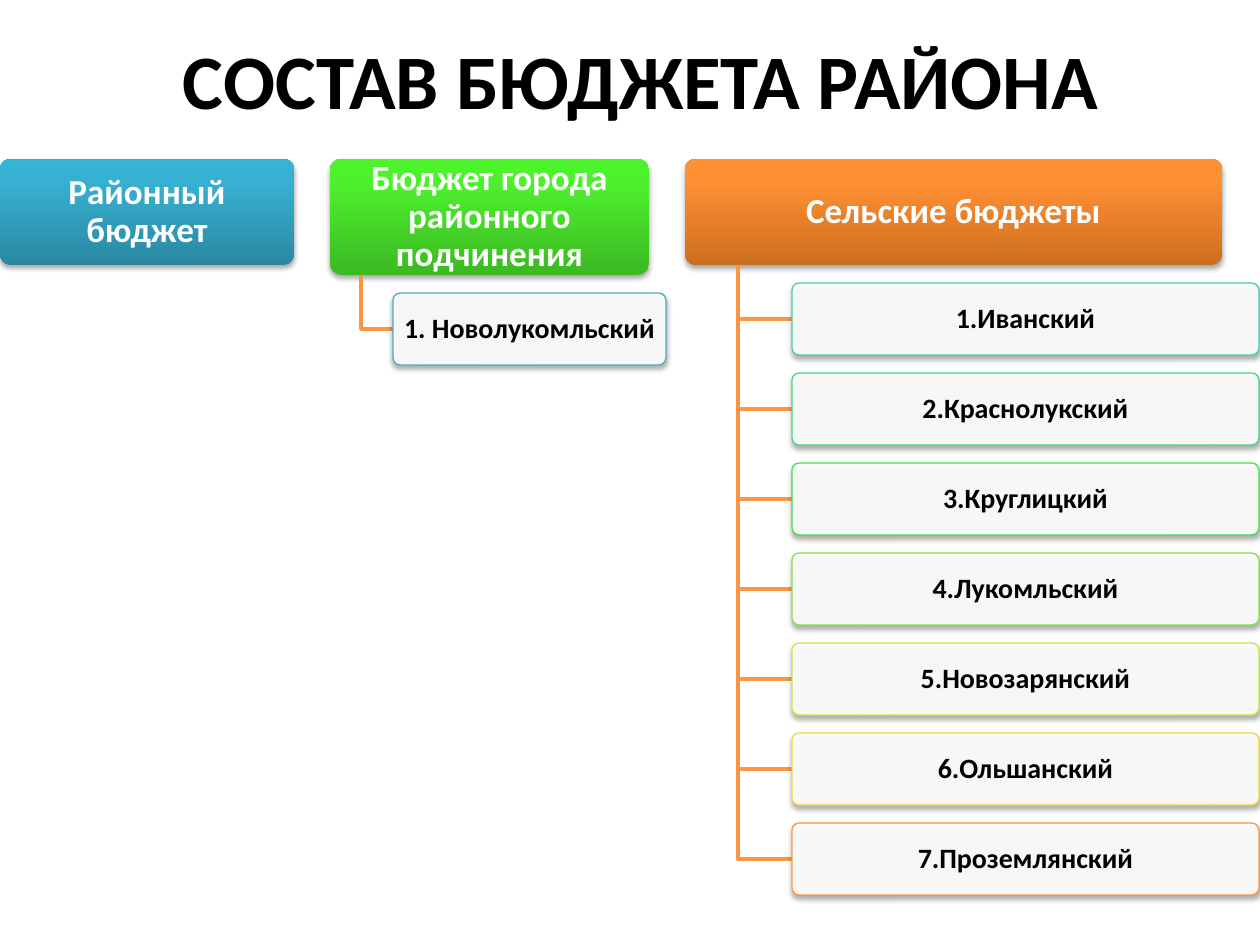
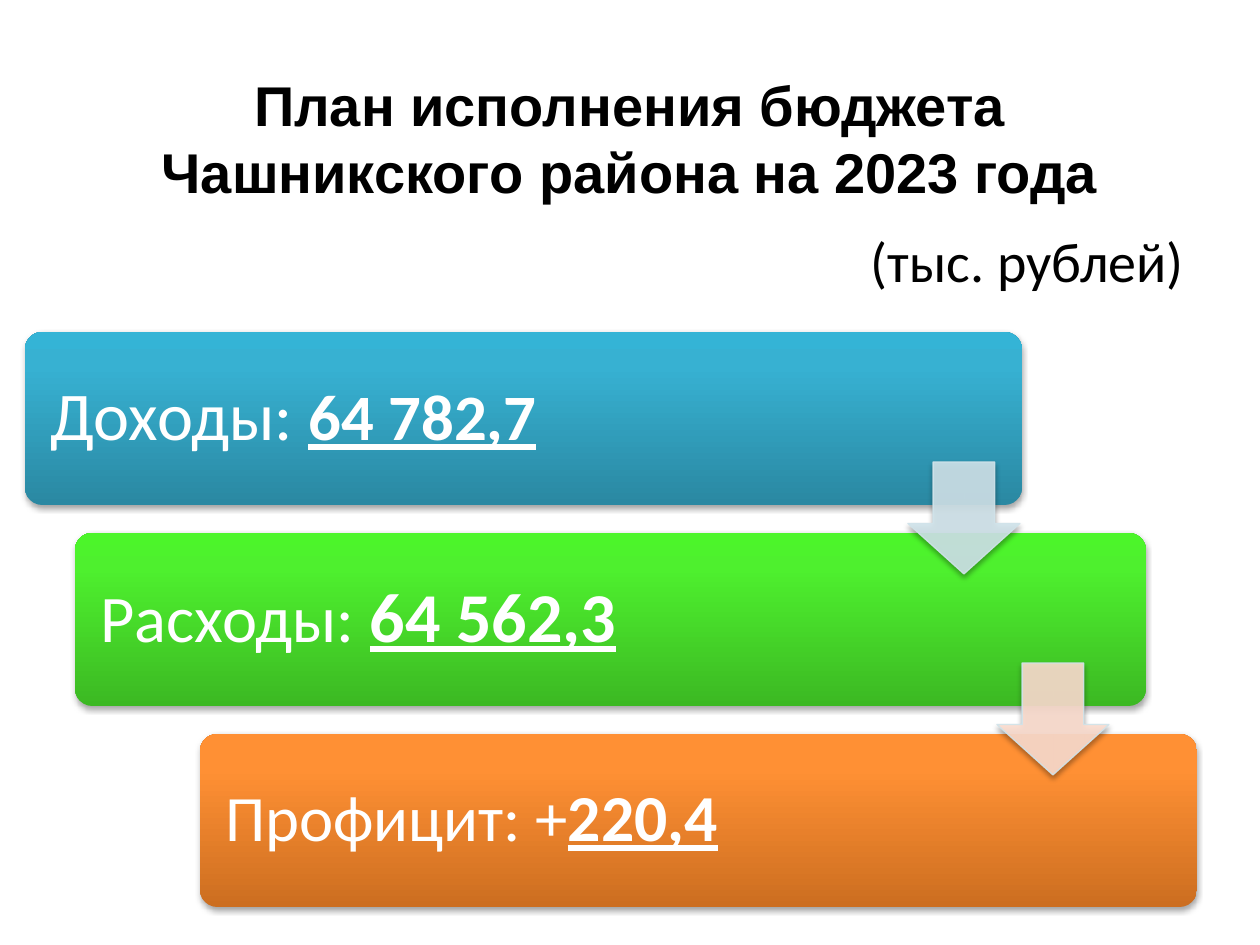
from dataclasses import dataclass

from lxml.etree import SubElement
from pptx import Presentation
from pptx.dml.color import RGBColor
from pptx.enum.shapes import MSO_SHAPE
from pptx.enum.text import MSO_ANCHOR, MSO_AUTO_SIZE, PP_ALIGN
from pptx.oxml.ns import qn
from pptx.util import Pt


@dataclass(frozen=True)
class Theme:
    font: str = "Calibri"
    plan_font: str = "Arial"
    ink: str = "000000"
    paper: str = "FFFFFF"
    branch: str = "F79646"
    arrow_edge: str = "D0E3EA"
    title_size: int = 44
    plan_size: int = 32
    head_size: int = 20
    leaf_size: int = 16
    opacity: int = 90


THEME = Theme()
# Gradient stops from bottom to top
STOP_POSITIONS = (0, 80, 100)
GRADIENTS = {
    "blue": ("2A88A2", "37B1D2", "34B4D6"),
    "green": ("3CB923", "4EF02E", "4CF52A"),
    "orange": ("CC6E20", "FF9034", "FF9136"),
}

# Content: budgets of the district
COMPOSITION_TITLE = "СОСТАВ БЮДЖЕТА РАЙОНА"
BUDGETS = [
    dict(name="Районный бюджет", colour="blue", width=294, height=106,
         leaf_width=0, members=[]),
    dict(name="Бюджет города районного подчинения", colour="green", width=319,
         height=116, leaf_width=273,
         members=[("1. Новолукомльский", "4BACC6")]),
    dict(name="Сельские бюджеты", colour="orange", width=537, height=106,
         leaf_width=467,
         members=[("1.Иванский", "49CEB6"), ("2.Краснолукский", "48D684"),
                  ("3.Круглицкий", "47DD4B"), ("4.Лукомльский", "80E446"),
                  ("5.Новозарянский", "C3EB46"), ("6.Ольшанский", "F1D746"),
                  ("7.Проземлянский", "F79646")]),
]

# Content: plan for the year, with (label, size) and (amount, size)
PLAN_TITLE = "План исполнения бюджета Чашникского района на 2023 года"
PLAN_UNIT = "(тыс. рублей)"
PLAN_STEPS = [
    dict(label=("Доходы: ", 39), amount=("64 782,7", 37), colour="blue",
         left=25, width=997),
    dict(label=("Расходы: ", 38), amount=("64 562,3", 40), colour="green",
         left=75, width=1071),
    dict(label=("Профицит: +", 37), amount=("220,4", 37.5), colour="orange",
         left=200, width=997),
]
PLAN_ARROWS = [(908, "D0E3EA"), (997, "FCDDCF")]

# Layout in px
SLIDE_SIZE = (1260, 945)
HEAD_TOP, HEAD_GAP = 159, 36
LEAF_HEIGHT, LEAF_GAP = 72, 18
STEP_TOP, STEP_HEIGHT, STEP_PITCH = 332, 173, 201
ARROW_SIZE, ARROW_DROP = 112, 130


def px(length):
    return round(length * 914400 / 126)


def rgb(code):
    return RGBColor.from_string(code)


def add_run(paragraph, text, size, color, bold=False, underline=False, font=THEME.font):
    run = paragraph.add_run()
    run.text = text
    run.font.name = font
    run.font.size = Pt(size)
    run.font.bold = bold
    run.font.underline = underline
    run.font.color.rgb = rgb(color)


# Shape styling
def add_alpha(color_node, percent):
    SubElement(color_node, qn("a:alpha"), val=str(percent * 1000))


def make_translucent(shape):
    for color_node in shape._element.spPr.iter(qn("a:srgbClr")):
        add_alpha(color_node, THEME.opacity)


def cast_shadow(shape):
    shape.shadow.inherit = False
    effects = shape._element.spPr.find(qn("a:effectLst"))
    outer = SubElement(effects, qn("a:outerShdw"), blurRad=str(Pt(3.1)),
                       dist=str(Pt(1.8)), dir="5400000", rotWithShape="0")
    add_alpha(SubElement(outer, qn("a:srgbClr"), val=THEME.ink), 35)


def fill_gradient(shape, colour):
    shape.fill.gradient()
    shape.fill.gradient_angle = 90
    stops = shape._element.spPr.find(qn("a:gradFill")).find(qn("a:gsLst"))
    for stop in list(stops):
        stops.remove(stop)
    for position, code in zip(STOP_POSITIONS, GRADIENTS[colour]):
        stop = SubElement(stops, qn("a:gs"), pos=str(position * 1000))
        SubElement(stop, qn("a:srgbClr"), val=code)


def fill_solid(shape, color):
    shape.fill.solid()
    shape.fill.fore_color.rgb = rgb(color)


def draw_line(shape, color, width=0.75):
    shape.line.color.rgb = rgb(color)
    shape.line.width = Pt(width)


def add_card(slide, box, inset, align):
    card = slide.shapes.add_shape(MSO_SHAPE.ROUNDED_RECTANGLE, *map(px, box))
    card.adjustments[0] = 0.1
    frame = card.text_frame
    frame.word_wrap = True
    frame.vertical_anchor = MSO_ANCHOR.MIDDLE
    frame.margin_left = frame.margin_right = px(inset)
    frame.margin_top = frame.margin_bottom = px(inset)
    paragraph = frame.paragraphs[0]
    paragraph.alignment = align
    paragraph.line_spacing = 0.9
    return card, paragraph


def add_gradient_card(slide, box, inset, align, colour):
    card, paragraph = add_card(slide, box, inset, align)
    fill_gradient(card, colour)
    card.line.fill.background()
    cast_shadow(card)
    return paragraph


# Placeholders
def place(placeholder, box):
    placeholder.left, placeholder.top, placeholder.width, placeholder.height = map(px, box)
    placeholder.text_frame.auto_size = MSO_AUTO_SIZE.NONE
    paragraph = placeholder.text_frame.paragraphs[0]
    paragraph.space_before = Pt(0)
    return paragraph


def set_title(slide, text, box, size, font):
    paragraph = place(slide.shapes.title, box)
    slide.shapes.title.text_frame.vertical_anchor = MSO_ANCHOR.MIDDLE
    paragraph.alignment = PP_ALIGN.CENTER
    add_run(paragraph, text, size, THEME.ink, bold=True, font=font)


# Slide 1: tree of budgets
def add_branch(slide, stem, top, leaf_left, middle):
    outline = slide.shapes.build_freeform(px(stem), px(top))
    outline.add_line_segments([(px(stem), px(middle)), (px(leaf_left), px(middle))],
                              close=False)
    branch = outline.convert_to_shape()
    branch.fill.background()
    draw_line(branch, THEME.branch, 2)
    branch.shadow.inherit = False


def add_leaf(slide, box, member, edge):
    leaf, paragraph = add_card(slide, box, 3, PP_ALIGN.CENTER)
    fill_solid(leaf, THEME.paper)
    make_translucent(leaf)
    draw_line(leaf, edge)
    cast_shadow(leaf)
    add_run(paragraph, member, THEME.leaf_size, THEME.ink, bold=True)


def build_composition(deck):
    slide = deck.slides.add_slide(deck.slide_layouts[5])
    set_title(slide, COMPOSITION_TITLE, (74, 0, 1134, 158), THEME.title_size, THEME.font)
    left = 0
    for budget in BUDGETS:
        width, height = budget["width"], budget["height"]
        head = add_gradient_card(slide, (left, HEAD_TOP, width, height), 5,
                                 PP_ALIGN.CENTER, budget["colour"])
        add_run(head, budget["name"], THEME.head_size, THEME.paper, bold=True)
        # The stem and the leaves step in by a tenth of the head each
        stem, leaf_left = left + width // 10, left + width // 5
        head_bottom = HEAD_TOP + height
        for row, (member, edge) in enumerate(budget["members"]):
            top = head_bottom + LEAF_GAP + row * (LEAF_HEIGHT + LEAF_GAP)
            add_branch(slide, stem, head_bottom, leaf_left, top + LEAF_HEIGHT // 2)
            add_leaf(slide, (leaf_left, top, budget["leaf_width"], LEAF_HEIGHT),
                     member, edge)
        left += width + HEAD_GAP


# Slide 2: stairs of the plan
def build_plan(deck):
    slide = deck.slides.add_slide(deck.slide_layouts[1])
    set_title(slide, PLAN_TITLE, (63, 34, 1134, 207), THEME.plan_size, THEME.plan_font)

    unit = place(slide.placeholders[1], (63, 220, 1134, 624))
    unit_format = unit._p.get_or_add_pPr()
    unit_format.set("marL", "0")
    unit_format.set("indent", "0")
    SubElement(unit_format, qn("a:buNone"))
    unit.alignment = PP_ALIGN.RIGHT
    add_run(unit, PLAN_UNIT, THEME.plan_size, THEME.ink)

    for row, step in enumerate(PLAN_STEPS):
        box = (step["left"], STEP_TOP + row * STEP_PITCH, step["width"], STEP_HEIGHT)
        line = add_gradient_card(slide, box, 20, PP_ALIGN.LEFT, step["colour"])
        add_run(line, *step["label"], THEME.paper)
        add_run(line, *step["amount"], THEME.paper, bold=True, underline=True)

    for row, (left, color) in enumerate(PLAN_ARROWS):
        top = STEP_TOP + row * STEP_PITCH + ARROW_DROP
        arrow = slide.shapes.add_shape(MSO_SHAPE.DOWN_ARROW, px(left), px(top),
                                       px(ARROW_SIZE), px(ARROW_SIZE))
        arrow.adjustments[0], arrow.adjustments[1] = 0.55, 0.45
        fill_solid(arrow, color)
        draw_line(arrow, THEME.arrow_edge)
        make_translucent(arrow)
        cast_shadow(arrow)


def main():
    deck = Presentation()
    deck.slide_width, deck.slide_height = map(px, SLIDE_SIZE)
    build_composition(deck)
    build_plan(deck)
    deck.save("out.pptx")


if __name__ == "__main__":
    main()
